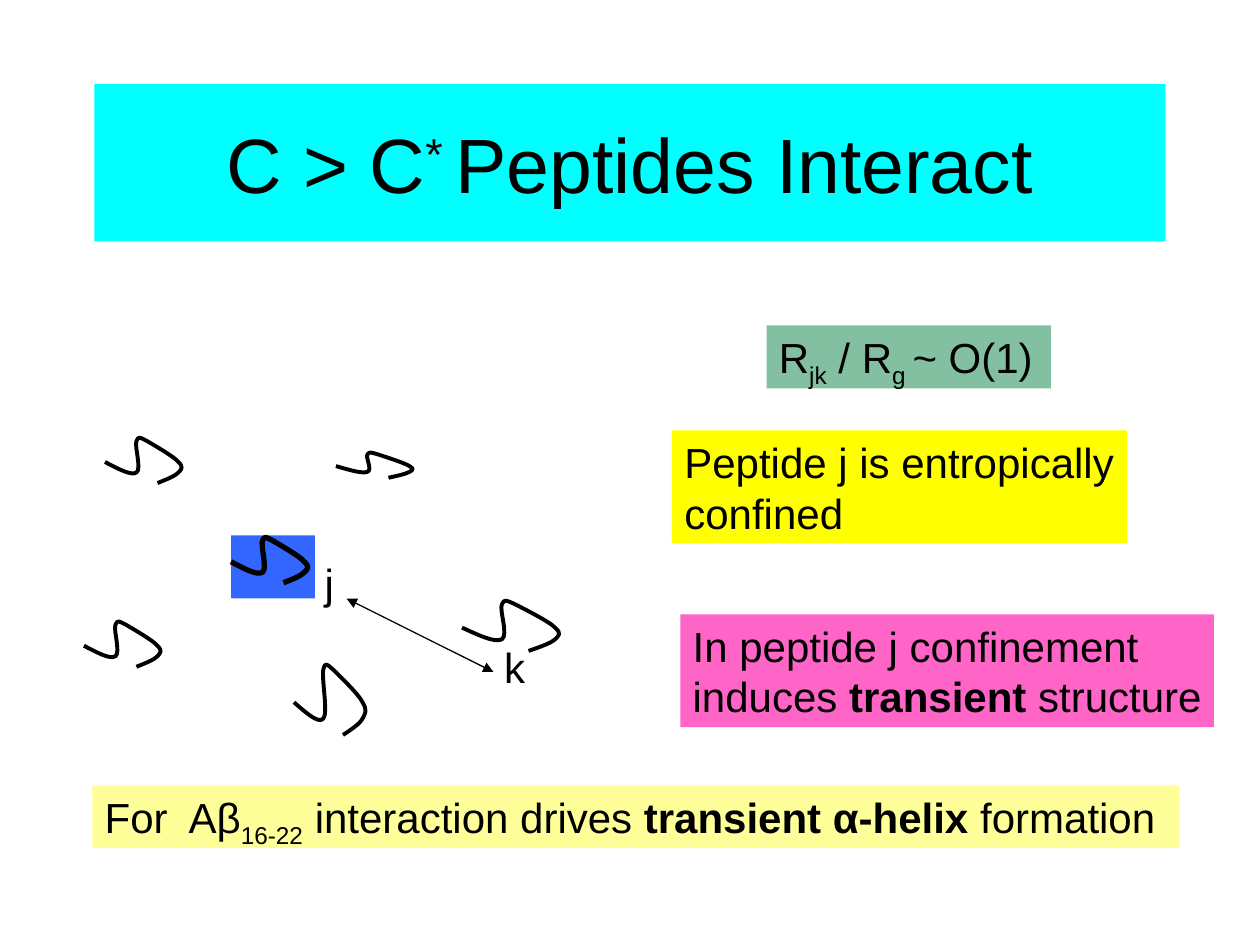
"""Build the slide on interacting peptides."""
from dataclasses import dataclass

import lxml.etree
import pptx
import pptx.dml.color
import pptx.enum.shapes
import pptx.enum.text
import pptx.oxml.ns
import pptx.util

Pt = pptx.util.Pt
qn = pptx.oxml.ns.qn


@dataclass(frozen=True)
class Theme:
    """Colours, font and type sizes of the slide."""
    ink: str = "000000"
    title: str = "00FFFF"
    focus: str = "3366FF"
    ratio: str = "339966"
    confined: str = "FFFF00"
    structure: str = "FF64C7"
    conclusion: str = "FFFF99"
    font: str = "Arial"
    title_size: float = 44
    body_size: float = 24


THEME = Theme()
SUB, SUPER = -25000, 30000

STRAND_START = (0, 556)
STRAND_CURVES = (
    ((167, 700), (333, 852), (400, 778)),
    ((467, 700), (373, 222), (400, 111)),
    ((427, 0), (444, 37), (533, 111)),
    ((622, 200), (880, 444), (933, 556)),
    ((1000, 667), (973, 704), (933, 778)),
    ((893, 852), (780, 926), (667, 1000)),
)


def rgb(value):
    """Return a colour object for a hex value."""
    return pptx.dml.color.RGBColor.from_string(value)


def set_fill(sp, color, alpha=None):
    """Fill a shape, with an optional opacity in percent."""
    sp.fill.solid()
    sp.fill.fore_color.rgb = rgb(color)
    if alpha is not None:
        clr = sp._element.spPr.find(".//" + qn("a:srgbClr"))
        lxml.etree.SubElement(clr, qn("a:alpha")).set("val", str(alpha * 1000))


def add_text(s, box, lines, size=THEME.body_size, fill=None, alpha=None):
    """Add a fitted text box; a run is (text, bold, baseline)."""
    sp = s.shapes.add_textbox(*map(Pt, box))
    if fill:
        set_fill(sp, fill, alpha)
    tf = sp.text_frame
    tf.word_wrap = False
    tf.auto_size = pptx.enum.text.MSO_AUTO_SIZE.SHAPE_TO_FIT_TEXT
    for i, runs in enumerate(lines):
        p = tf.add_paragraph() if i else tf.paragraphs[0]
        p.font.name = THEME.font
        p.font.size = Pt(size)
        p.font.color.rgb = rgb(THEME.ink)
        for text, bold, baseline in runs:
            r = p.add_run()
            r.text = text
            if bold:
                r.font.bold = True
            if baseline:
                r._r.get_or_add_rPr().set("baseline", str(baseline))
    return tf


def plain(text):
    """Return a plain run."""
    return text, False, 0


def strong(text):
    """Return a bold run."""
    return text, True, 0


def sub(text):
    """Return a subscript run."""
    return text, False, SUB


def add_title(s, box):
    """Place the title band."""
    runs = [plain("C > C"), ("* ", False, SUPER), plain("Peptides Interact")]
    tf = add_text(s, box, [runs], THEME.title_size, THEME.title)
    tf.auto_size = pptx.enum.text.MSO_AUTO_SIZE.NONE
    tf.word_wrap = True
    tf.vertical_anchor = pptx.enum.text.MSO_ANCHOR.MIDDLE
    tf.paragraphs[0].alignment = pptx.enum.text.PP_ALIGN.CENTER


def add_peptide(s, box, weight=2.25, fill=None):
    """Draw one curved peptide strand scaled to its box."""
    x, y, w, h = box
    builder = s.shapes.build_freeform(Pt(x), Pt(y))
    builder.add_line_segments([(Pt(x + w), Pt(y + h))], close=False)
    sp = builder.convert_to_shape()
    sp.shadow.inherit = False
    if fill:
        set_fill(sp, fill)
    else:
        sp.fill.background()
    sp.line.color.rgb = rgb(THEME.ink)
    sp.line.width = Pt(weight)
    outline = sp._element.find(".//" + qn("a:path"))
    for child in list(outline):
        outline.remove(child)
    outline.set("w", "1000")
    outline.set("h", "1000")
    segments = [("a:moveTo", (STRAND_START,))]
    segments += [("a:cubicBezTo", points) for points in STRAND_CURVES]
    for tag, points in segments:
        segment = lxml.etree.SubElement(outline, qn(tag))
        for px, py in points:
            pt = lxml.etree.SubElement(segment, qn("a:pt"))
            pt.set("x", str(px))
            pt.set("y", str(py))


def add_distance(s, start, end):
    """Draw the double arrow between two peptides."""
    kind = pptx.enum.shapes.MSO_CONNECTOR.STRAIGHT
    sp = s.shapes.add_connector(kind, *map(Pt, start + end))
    sp.line.color.rgb = rgb(THEME.ink)
    sp.line.width = Pt(0.75)
    ln = sp.line._get_or_add_ln()
    for tag in ("a:headEnd", "a:tailEnd"):
        lxml.etree.SubElement(ln, qn(tag)).set("type", "triangle")
    lxml.etree.SubElement(sp._element.spPr, qn("a:effectLst"))


def add_solution(s, box):
    """Place the peptides, the highlighted one and its distance arrow."""
    x, y, _, _ = box
    kind = pptx.enum.shapes.MSO_SHAPE.RECTANGLE
    sp = s.shapes.add_shape(kind, Pt(x + 84), Pt(y + 57), Pt(48), Pt(36))
    sp.shadow.inherit = False
    set_fill(sp, THEME.focus)
    sp.line.fill.background()
    for dx, dy, w, h in ((12, 0, 45, 27), (0, 105, 45, 27), (120, 129, 42, 42),
                         (144, 9, 45, 15), (216, 93, 57, 30)):
        add_peptide(s, (x + dx, y + dy, w, h))
    add_peptide(s, (x + 84, y + 57, 45, 27), 3, THEME.focus)
    add_text(s, (x + 130.5, y + 66, 20, 36), [[plain("j")]])
    add_text(s, (x + 233, y + 114, 26.5, 36), [[plain("k")]])
    add_distance(s, (x + 150, y + 93), (x + 234, y + 135))


def add_findings(s, box):
    """Place the three coloured statements beside the peptides."""
    x, y, _, _ = box
    add_text(s, (x + 54, y, 162.5, 36),
             [[plain("R"), sub("jk"), plain(" / R"), sub("g "), plain("~ O(1)")]],
             fill=THEME.ratio, alpha=61)
    add_text(s, (x, y + 60, 260, 64.5),
             [[plain("Peptide j is entropically")], [plain("confined")]],
             fill=THEME.confined)
    add_text(s, (x + 4.75, y + 165, 305, 64.5),
             [[plain("In peptide j confinement")],
              [plain("induces "), strong("transient"), plain(" structure")]],
             fill=THEME.structure)


def add_conclusion(s, box):
    """Place the closing statement."""
    runs = [plain("For  Aβ"), sub("16-22"), plain(" interaction drives "),
            strong("transient α-helix"), plain(" formation")]
    add_text(s, box, [runs], fill=THEME.conclusion)


def main():
    """Build and save the presentation."""
    prs = pptx.Presentation()
    prs.slide_width, prs.slide_height = Pt(720), Pt(540)
    s = prs.slides.add_slide(prs.slide_layouts[6])
    add_title(s, (54, 48, 612, 90))
    add_solution(s, (48, 249, 273, 171))
    add_findings(s, (384, 186, 310, 230))
    add_conclusion(s, (52.75, 448.75, 621.25, 36))
    prs.save("out.pptx")


if __name__ == "__main__":
    main()
